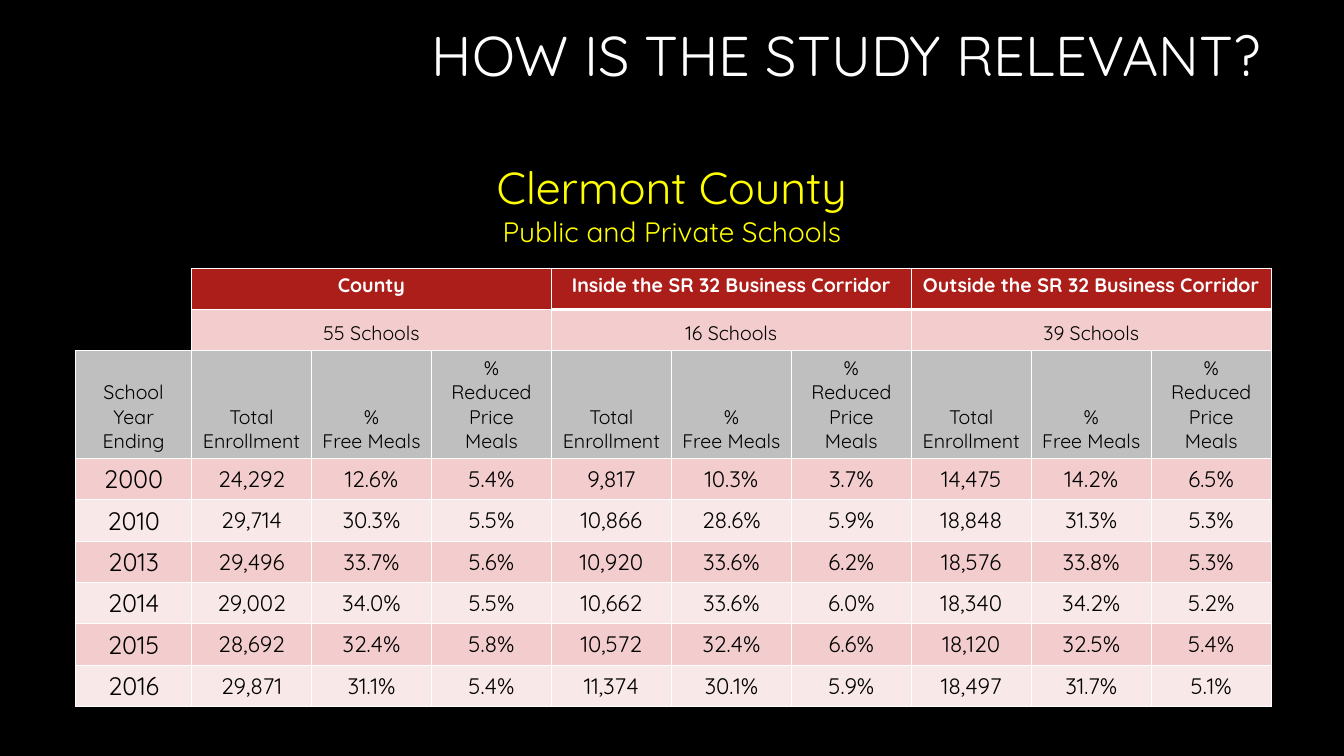
from pptx import Presentation
from pptx.dml.color import RGBColor
from pptx.enum import text
from pptx.oxml import xmlchemy as xc
from pptx.util import Inches, Pt

BLACK = RGBColor(0x00, 0x00, 0x00)
WHITE = RGBColor(0xFF, 0xFF, 0xFF)
YELLOW = RGBColor(0xFF, 0xFF, 0x00)
RED = RGBColor(0xAC, 0x1E, 0x1A)
ROSE = RGBColor(0xF3, 0xCD, 0xCD)
BLUSH = RGBColor(0xF9, 0xE8, 0xE8)
GRAY = RGBColor(0xBF, 0xBF, 0xBF)
FONT = "Quicksand"
TOP, MID, LOW = (text.MSO_ANCHOR.TOP, text.MSO_ANCHOR.MIDDLE,
                 text.MSO_ANCHOR.BOTTOM)
CENTER, RIGHT = text.PP_ALIGN.CENTER, text.PP_ALIGN.RIGHT

GROUPS = [
    ("County", "55 Schools"),
    ("Inside the SR 32 Business Corridor", "16 Schools"),
    ("Outside the SR 32 Business Corridor", "39 Schools"),
]
HEADS = ["Total Enrollment", "%\nFree Meals", "%\nReduced Price Meals"]
YEARS = [
    "2000 24,292 12.6% 5.4% 9,817 10.3% 3.7% 14,475 14.2% 6.5%",
    "2010 29,714 30.3% 5.5% 10,866 28.6% 5.9% 18,848 31.3% 5.3%",
    "2013 29,496 33.7% 5.6% 10,920 33.6% 6.2% 18,576 33.8% 5.3%",
    "2014 29,002 34.0% 5.5% 10,662 33.6% 6.0% 18,340 34.2% 5.2%",
    "2015 28,692 32.4% 5.8% 10,572 32.4% 6.6% 18,120 32.5% 5.4%",
    "2016 29,871 31.1% 5.4% 11,374 30.1% 5.9% 18,497 31.7% 5.1%",
]


def style(para, size, color, align=CENTER, bold=False, **form):
    para.alignment = align
    for key, val in form.items():
        setattr(para, key, val)
    look = {"name": FONT, "size": Pt(size), "bold": bold}
    for key, val in look.items():
        setattr(para.font, key, val)
    para.font.color.rgb = color


def add_text(slide, area, lines, anchor=TOP):
    box = slide.shapes.add_textbox(*map(Inches, area))
    frame = box.text_frame
    frame.word_wrap = True
    frame.vertical_anchor = anchor
    frame.text = "\n".join(words for words, form in lines)
    for para, (words, form) in zip(frame.paragraphs, lines):
        style(para, **form)


def edge(cell, **sides):
    """Draw cell borders; a side that is not given stays without a line."""
    props = cell._tc.get_or_add_tcPr()
    for side in "LRTB":
        width = sides.get(side, 0)
        line = xc.OxmlElement(f"a:ln{side}")
        props.append(line)
        if not width:
            line.append(xc.OxmlElement("a:noFill"))
            continue
        line.set("w", str(Pt(width)))
        fill = xc.OxmlElement("a:solidFill")
        color = xc.OxmlElement("a:srgbClr")
        color.set("val", str(WHITE))
        fill.append(color)
        line.append(fill)


def fill_cell(cell, words, size, back, anchor, color=BLACK, bold=False):
    cell.fill.solid()
    cell.fill.fore_color.rgb = back
    cell.vertical_anchor = anchor
    cell.text = words
    for para in cell.text_frame.paragraphs:
        style(para, size, color, bold=bold)


def add_grid(slide):
    area = map(Inches, (0.75, 2.66, 11.86, 4.35))
    table = slide.shapes.add_table(9, 10, *area).table
    table.first_row = table.horz_banding = False
    for num, col in enumerate(table.columns):
        col.width = Inches(1.19 if num else 1.15)
    for num, row in enumerate(table.rows):
        row.height = Inches(1.07 if num == 2 else 0.41)

    # Borders, with an open corner at the upper left
    for row in range(9):
        for col in range(10):
            cell = table.cell(row, col)
            if row < 2 and col == 0:
                edge(cell, R=1, B=row)
                cell.fill.background()
            else:
                edge(cell, L=1, R=1, T=1, B=3 if row == 0 and col > 3 else 1)

    # Group headers
    for num, (name, count) in enumerate(GROUPS):
        col = 1 + 3 * num
        for row in range(2):
            table.cell(row, col).merge(table.cell(row, col + 2))
        fill_cell(table.cell(0, col), name, 14, RED, TOP, WHITE, True)
        fill_cell(table.cell(1, col), count, 14, ROSE, LOW)

    # Column headers
    for col, name in enumerate(["School Year Ending"] + HEADS * len(GROUPS)):
        fill_cell(table.cell(2, col), name, 14, GRAY, LOW)

    # Yearly values
    for num, year in enumerate(YEARS):
        back = BLUSH if num % 2 else ROSE
        for col, value in enumerate(year.split()):
            size = 16 if col else 18
            fill_cell(table.cell(num + 3, col), value, size, back, MID)


def main():
    deck = Presentation()
    deck.slide_width, deck.slide_height = Inches(13.33), Inches(7.5)
    slide = deck.slides.add_slide(deck.slide_layouts[6])
    slide.background.fill.solid()
    slide.background.fill.fore_color.rgb = BLACK

    # Subject of the table
    add_text(slide, (0.75, 1.6, 11.83, 0.99), [
        ("Clermont County",
         {"size": 32, "color": YELLOW, "line_spacing": 0.9}),
        ("Public and Private Schools",
         {"size": 20, "color": YELLOW, "line_spacing": 0.5,
          "space_before": Pt(10)}),
    ])

    # Title
    add_text(slide, (3.18, 0.13, 9.42, 0.81), [
        ("HOW IS THE STUDY RELEVANT?",
         {"size": 40, "color": WHITE, "align": RIGHT}),
    ], MID)

    add_grid(slide)
    deck.save("out.pptx")


if __name__ == "__main__":
    main()
